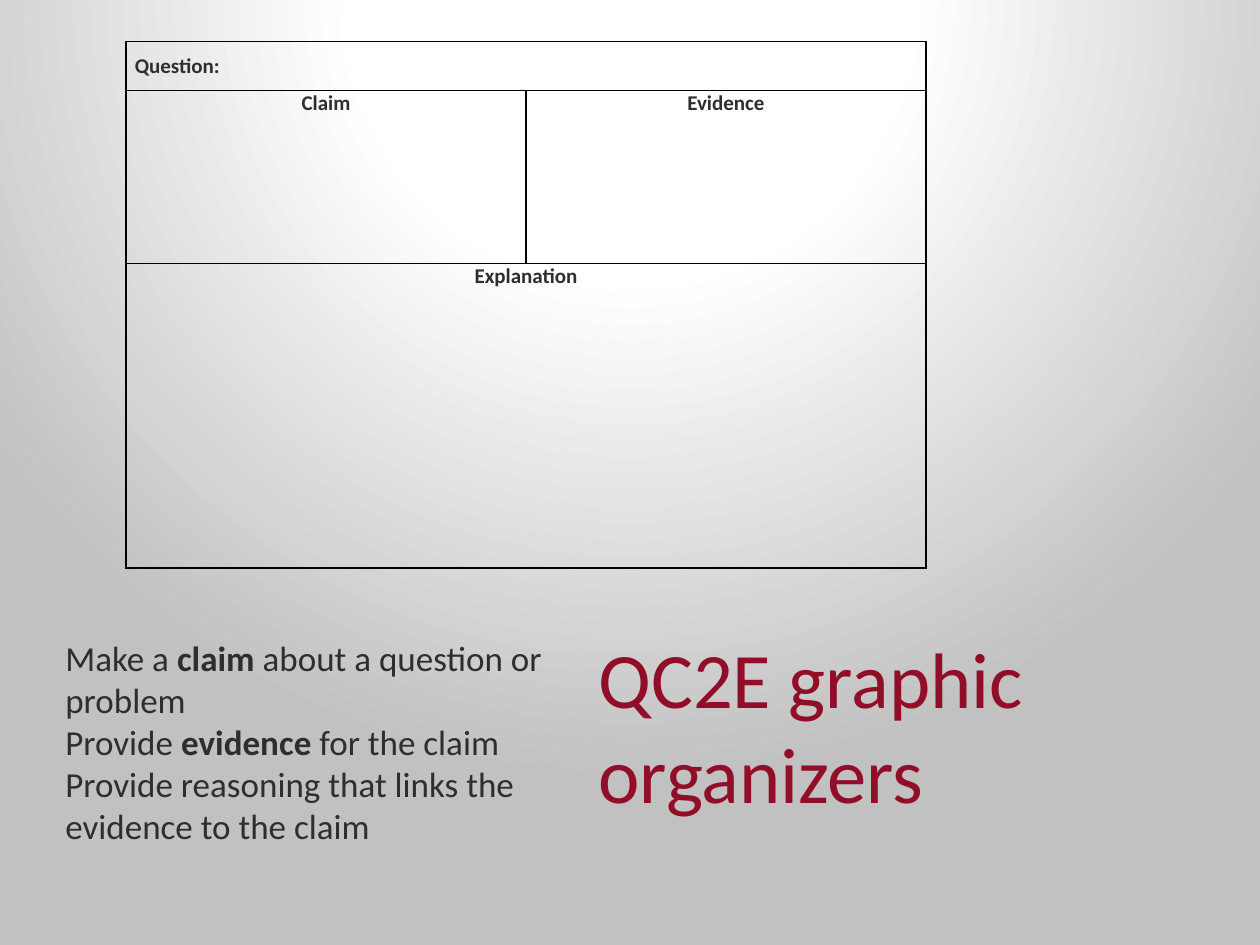
from pptx import Presentation, oxml, util as u
from pptx.dml.color import RGBColor
from pptx.enum import text
from pptx.oxml.ns import nsdecls

WIDTH, HEIGHT = u.Inches(10), u.Inches(7.5)
CRIMSON = RGBColor(0x91, 0x0D, 0x28)
CHARCOAL = RGBColor(0x2E, 0x2E, 0x2E)
BLACK = RGBColor(0, 0, 0)
WHITE = RGBColor(0xFF, 0xFF, 0xFF)
SILVER = RGBColor(0xC1, 0xC1, 0xC1)
FONT = "Calibri"
LEFT, CENTER = text.PP_ALIGN.LEFT, text.PP_ALIGN.CENTER

ROW_HEIGHTS = [0.39, 1.37, 2.42]
HEADINGS = [(0, 0, "Question:", LEFT), (1, 0, "Claim", CENTER),
            (1, 1, "Evidence", CENTER), (2, 0, "Explanation", CENTER)]
STEPS = [
    [("Make a ", False), ("claim", True), (" about a question or problem", False)],
    [("Provide ", False), ("evidence", True), (" for the claim", False)],
    [("Provide reasoning that links the evidence to the claim", False)],
]


def box(left, top, width, height):
    return [u.Inches(value) for value in (left, top, width, height)]


def style(font, size, color, bold=False):
    font.name, font.size, font.bold = FONT, u.Pt(size), bold
    font.color.rgb = color


def paint_background(slide):
    stops = "".join(
        f'<a:gs pos="{share * 1000}"><a:srgbClr val="{color}"/></a:gs>'
        for share, color in [(0, WHITE), (35, WHITE), (100, SILVER)])
    slide.element.cSld.insert(0, oxml.parse_xml(
        f'<p:bg {nsdecls("p", "a")}><p:bgPr><a:gradFill rotWithShape="1">'
        f'<a:gsLst>{stops}</a:gsLst><a:path path="circle">'
        '<a:fillToRect l="50000" t="-80000" r="50000" b="180000"/></a:path>'
        '</a:gradFill><a:effectLst/></p:bgPr></p:bg>'))


def add_title(slide, wording):
    title = slide.shapes.title
    title.left, title.top, title.width, title.height = box(4.75, 4.78, 4.33, 1.72)
    frame = title.text_frame
    frame.text = wording
    frame.auto_size = text.MSO_AUTO_SIZE.NONE
    frame.vertical_anchor = text.MSO_ANCHOR.BOTTOM
    frame.margin_left = frame.margin_right = frame.margin_bottom = 0
    frame.margin_top = u.Inches(0.07)
    heading = frame.paragraphs[0]
    heading.alignment = LEFT
    style(heading.runs[0].font, 44.9, CRIMSON)


def format_cell(cell):
    cell.fill.background()
    cell.margin_left = cell.margin_right = u.Inches(0.07)
    cell.margin_top = cell.margin_bottom = 0
    properties = cell._tc.get_or_add_tcPr()
    for index, side in enumerate("LRTB"):
        properties.insert(index, oxml.parse_xml(
            f'<a:ln{side} {nsdecls("a")} w="{u.Pt(1)}"><a:solidFill>'
            f'<a:srgbClr val="{BLACK}"/></a:solidFill></a:ln{side}>'))


def add_organizer(slide):
    organizer = slide.shapes.add_table(
        len(ROW_HEIGHTS), 2, *box(1, 0.33, 6.35, sum(ROW_HEIGHTS))).table
    organizer.first_row = organizer.horz_banding = False
    for row, height in zip(organizer.rows, ROW_HEIGHTS):
        row.height = u.Inches(height)
    for cell in organizer.iter_cells():
        format_cell(cell)
    for row in (0, 2):
        organizer.cell(row, 0).merge(organizer.cell(row, 1))
    for row, column, wording, alignment in HEADINGS:
        cell = organizer.cell(row, column)
        cell.text_frame.text = wording
        heading = cell.text_frame.paragraphs[0]
        heading.alignment = alignment
        style(heading.runs[0].font, 12, CHARCOAL, bold=True)
    organizer.cell(0, 0).vertical_anchor = text.MSO_ANCHOR.MIDDLE


def add_steps(slide):
    frame = slide.shapes.add_textbox(*box(0.42, 5, 4.75, 1.78)).text_frame
    frame.word_wrap = True
    frame.auto_size = text.MSO_AUTO_SIZE.SHAPE_TO_FIT_TEXT
    for index, parts in enumerate(STEPS):
        step = frame.add_paragraph() if index else frame.paragraphs[0]
        for wording, bold in parts:
            run = step.add_run()
            run.text = wording
            style(run.font, 20, CHARCOAL, bold)


def main():
    deck = Presentation()
    deck.slide_width, deck.slide_height = WIDTH, HEIGHT
    slide = deck.slides.add_slide(deck.slide_layouts[5])
    paint_background(slide)
    add_title(slide, "QC2E graphic organizers")
    add_organizer(slide)
    add_steps(slide)
    deck.save("out.pptx")


if __name__ == "__main__":
    main()
